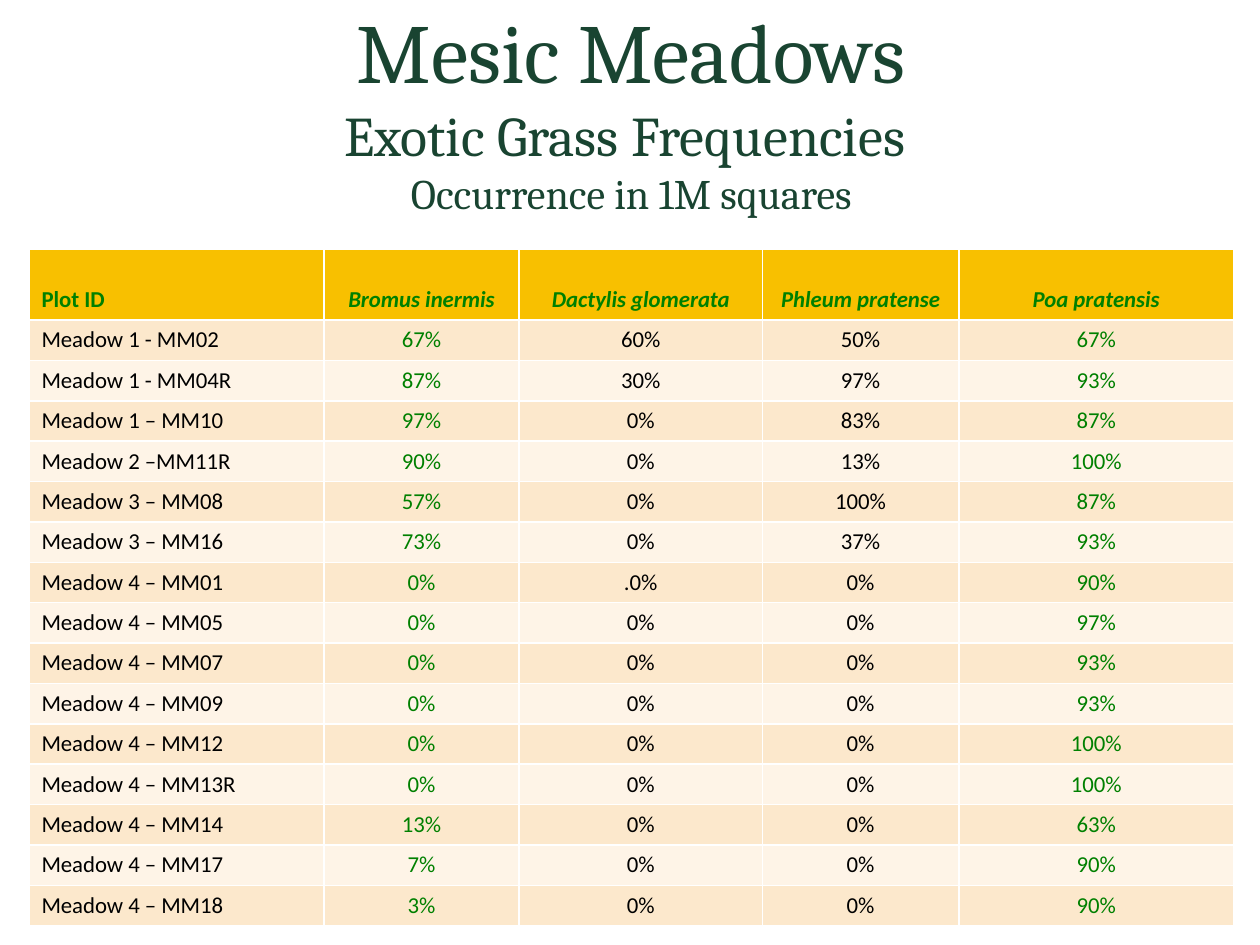
"""Build the Mesic Meadows slide with its exotic grass frequency table."""
from typing import NamedTuple

from pptx import Presentation
from pptx.dml.color import RGBColor
from pptx.enum.text import MSO_ANCHOR as Anchor, MSO_AUTO_SIZE as AutoSize, PP_ALIGN as Align
from pptx.util import Inches, Pt

COLORS = {
    "title": "194431",
    "green": "008000",
    "black": "000000",
    "header": "F8C000",
    "odd": "FCE8CC",
    "even": "FEF4E7",
}
LEFT, WIDTH = 0.23, 9.56
HEADER_HEIGHT, ROW_HEIGHT = 0.56, 0.32


class TitleLine(NamedTuple):
    text: str
    size: int


class Column(NamedTuple):
    heading: str
    width: float
    color: str
    align: Align


class Plot(NamedTuple):
    name: str
    bromus: str
    dactylis: str
    phleum: str
    poa: str


TITLE = [
    TitleLine("Mesic Meadows", 48),
    TitleLine("Exotic Grass Frequencies ", 32),
    TitleLine("Occurrence in 1M squares", 24),
]
COLUMNS = [
    Column("Plot ID", 2.34, "black", Align.LEFT),
    Column("Bromus inermis", 1.55, "green", Align.CENTER),
    Column("Dactylis glomerata", 1.93, "black", Align.CENTER),
    Column("Phleum pratense", 1.56, "black", Align.CENTER),
    Column("Poa pratensis", 2.18, "green", Align.CENTER),
]
PLOTS = [
    Plot("Meadow 1 - MM02", "67%", "60%", "50%", "67%"),
    Plot("Meadow 1 - MM04R", "87%", "30%", "97%", "93%"),
    Plot("Meadow 1 – MM10", "97%", "0%", "83%", "87%"),
    Plot("Meadow 2 –MM11R", "90%", "0%", "13%", "100%"),
    Plot("Meadow 3 – MM08", "57%", "0%", "100%", "87%"),
    Plot("Meadow 3 – MM16", "73%", "0%", "37%", "93%"),
    Plot("Meadow 4 – MM01", "0%", ".0%", "0%", "90%"),
    Plot("Meadow 4 – MM05", "0%", "0%", "0%", "97%"),
    Plot("Meadow 4 – MM07", "0%", "0%", "0%", "93%"),
    Plot("Meadow 4 – MM09", "0%", "0%", "0%", "93%"),
    Plot("Meadow 4 – MM12", "0%", "0%", "0%", "100%"),
    Plot("Meadow 4 – MM13R", "0%", "0%", "0%", "100%"),
    Plot("Meadow 4 – MM14", "13%", "0%", "0%", "63%"),
    Plot("Meadow 4 – MM17", "7%", "0%", "0%", "90%"),
    Plot("Meadow 4 – MM18", "3%", "0%", "0%", "90%"),
]


def rgb(name: str) -> RGBColor:
    return RGBColor.from_string(COLORS[name])


def write_title(sp, lines: list[TitleLine]) -> None:
    sp.left, sp.top = Inches(LEFT), Inches(0.09)
    sp.width, sp.height = Inches(WIDTH), Inches(1.55)
    tf = sp.text_frame
    tf.auto_size, tf.vertical_anchor = AutoSize.NONE, Anchor.MIDDLE
    p = tf.paragraphs[0]
    p.alignment = Align.CENTER
    for i, line in enumerate(lines):
        if i:
            p.add_line_break()
        r = p.add_run()
        r.text = line.text
        r.font.size, r.font.name = Pt(line.size), "Cambria"
        r.font.color.rgb = rgb("title")


def write_cell(cell, text: str, align: Align, color: str, fill: str,
               bold: bool = False, italic: bool = False) -> None:
    cell.fill.solid()
    cell.fill.fore_color.rgb = rgb(fill)
    cell.text = text
    p = cell.text_frame.paragraphs[0]
    p.alignment = align
    p.font.size, p.font.name = Pt(13), "Calibri"
    p.font.bold, p.font.italic = bold, italic
    p.font.color.rgb = rgb(color)


def add_frequency_table(s, columns: list[Column], plots: list[Plot]) -> None:
    height = HEADER_HEIGHT + ROW_HEIGHT * len(plots)
    table = s.shapes.add_table(len(plots) + 1, len(columns), Inches(LEFT), Inches(1.98),
                               Inches(WIDTH), Inches(height)).table
    for i, row in enumerate(table.rows):
        row.height = Inches(ROW_HEIGHT if i else HEADER_HEIGHT)
    for j, column in enumerate(columns):
        table.columns[j].width = Inches(column.width)
        header = table.cell(0, j)
        write_cell(header, column.heading, column.align, "green", "header",
                   bold=True, italic=j > 0)
        header.vertical_anchor = Anchor.BOTTOM
        for i, plot in enumerate(plots, start=1):
            write_cell(table.cell(i, j), plot[j], column.align, column.color,
                       "odd" if i % 2 else "even")


def main() -> None:
    prs = Presentation()
    prs.slide_width, prs.slide_height = Inches(10), Inches(7.5)
    s = prs.slides.add_slide(prs.slide_layouts[5])
    write_title(s.shapes.title, TITLE)
    add_frequency_table(s, COLUMNS, PLOTS)
    prs.save("out.pptx")


if __name__ == "__main__":
    main()
